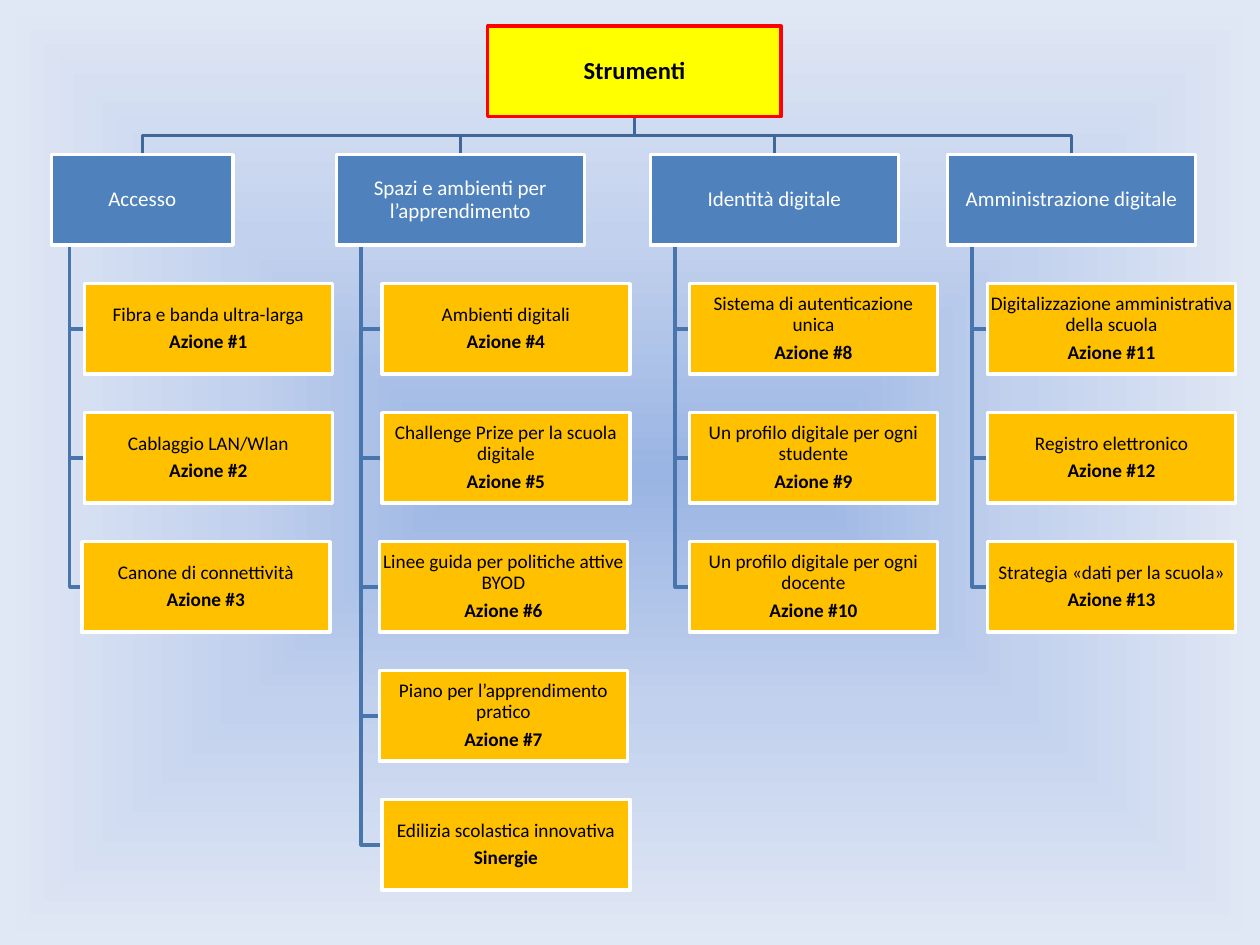
from pptx import Presentation
from pptx.dml.color import RGBColor
from pptx.enum.shapes import MSO_SHAPE as Shape
from pptx.enum.text import MSO_ANCHOR as Anchor, PP_ALIGN as Align
from pptx.oxml import parse_xml
from pptx.oxml.ns import nsdecls
from pptx.util import Cm, Pt

THEME = {
    "font": "Calibri",
    "line": 2,
    "root": {"fill": "FFFF00", "edge": "FF0000", "text": "000000", "size": 14},
    "area": {"fill": "4F81BD", "edge": "FFFFFF", "text": "FFFFFF", "size": 12},
    "action": {"fill": "FFC000", "edge": "FFFFFF", "text": "000000", "size": 11},
    "root_link": "3F6797",
    "action_link": "4875AC",
    "background": [(0, "9AB5E4"), (50, "C2D1ED"), (100, "E1E8F5")],
}

BOX_WIDTH, BOX_HEIGHT = 5, 1.82
ROOT_LEFT, ROOT_TOP, ROOT_WIDTH = 9.83, 0.53, 5.92
AREA_TOP = 3.12
ACTION_TOP, ACTION_STEP = 5.72, 2.6

AREAS = [
    ("Accesso", 1.04, 3.66, [
        ("Fibra e banda ultra-larga", "Azione #1", 1.7),
        ("Cablaggio LAN/Wlan", "Azione #2", 1.7),
        ("Canone di connettività", "Azione #3", 1.65),
    ]),
    ("Spazi e ambienti per l’apprendimento", 6.78, BOX_WIDTH, [
        ("Ambienti digitali", "Azione #4", 7.7),
        ("Challenge Prize per la scuola digitale", "Azione #5", 7.7),
        ("Linee guida per politiche attive BYOD", "Azione #6", 7.65),
        ("Piano per l’apprendimento pratico", "Azione #7", 7.65),
        ("Edilizia scolastica innovativa", "Sinergie", 7.7),
    ]),
    ("Identità digitale", 13.11, BOX_WIDTH, [
        ("Sistema di autenticazione unica", "Azione #8", 13.9),
        ("Un profilo digitale per ogni studente", "Azione #9", 13.9),
        ("Un profilo digitale per ogni docente", "Azione #10", 13.9),
    ]),
    ("Amministrazione digitale", 19.1, BOX_WIDTH, [
        ("Digitalizzazione amministrativa della scuola", "Azione #11", 19.91),
        ("Registro elettronico", "Azione #12", 19.91),
        ("Strategia «dati per la scuola»", "Azione #13", 19.91),
    ]),
]

deck = Presentation()
deck.slide_width, deck.slide_height = Cm(25.4), Cm(19.05)
page = deck.slides.add_slide(deck.slide_layouts[6])

stops = "".join(
    f'<a:gs pos="{position * 1000}"><a:srgbClr val="{color}"/></a:gs>'
    for position, color in THEME["background"]
)
page.element.cSld.insert(0, parse_xml(
    f'<p:bg {nsdecls("p", "a")}><p:bgPr><a:gradFill rotWithShape="1">'
    f'<a:gsLst>{stops}</a:gsLst><a:path path="shape">'
    '<a:fillToRect l="50000" t="50000" r="50000" b="50000"/></a:path>'
    '</a:gradFill><a:effectLst/></p:bgPr></p:bg>'
))


def add_link(points, color):
    corners = [(Cm(x), Cm(y)) for x, y in points]
    builder = page.shapes.build_freeform(*corners[0])
    builder.add_line_segments(corners[1:], close=False)
    link = builder.convert_to_shape()
    link.shadow.inherit = False
    link.fill.background()
    link.line.color.rgb = RGBColor.from_string(color)
    link.line.width = Pt(THEME["line"])


def add_box(left, top, width, lines, style):
    box = page.shapes.add_shape(
        Shape.RECTANGLE, Cm(left), Cm(top), Cm(width), Cm(BOX_HEIGHT))
    box.shadow.inherit = False
    box.fill.solid()
    box.fill.fore_color.rgb = RGBColor.from_string(style["fill"])
    box.line.color.rgb = RGBColor.from_string(style["edge"])
    box.line.width = Pt(THEME["line"])
    frame = box.text_frame
    frame.word_wrap = True
    frame.vertical_anchor = Anchor.MIDDLE
    frame.margin_left = frame.margin_right = Cm(0.02)
    frame.margin_top = frame.margin_bottom = Cm(0.02)
    frame.text = "\n".join(text for text, bold in lines)
    for para, (text, bold) in zip(frame.paragraphs, lines):
        para.alignment = Align.CENTER
        para.line_spacing = 0.9
        para.space_after = Pt(style["size"] * 0.35)
        span = para.runs[0]
        span.font.name = THEME["font"]
        span.font.size = Pt(style["size"])
        span.font.bold = bold
        span.font.color.rgb = RGBColor.from_string(style["text"])


root_center = ROOT_LEFT + ROOT_WIDTH / 2
root_bottom = ROOT_TOP + BOX_HEIGHT
branch_y = (root_bottom + AREA_TOP) / 2

for title, left, width, actions in AREAS:
    center = left + width / 2
    trunk = left + width / 10
    add_link([(root_center, root_bottom), (root_center, branch_y),
              (center, branch_y), (center, AREA_TOP)], THEME["root_link"])
    for row, (name, label, action_left) in enumerate(actions):
        middle = ACTION_TOP + row * ACTION_STEP + BOX_HEIGHT / 2
        add_link([(trunk, AREA_TOP + BOX_HEIGHT), (trunk, middle),
                  (action_left, middle)], THEME["action_link"])

add_box(ROOT_LEFT, ROOT_TOP, ROOT_WIDTH, [("Strumenti", True)], THEME["root"])
for title, left, width, actions in AREAS:
    add_box(left, AREA_TOP, width, [(title, False)], THEME["area"])
    for row, (name, label, action_left) in enumerate(actions):
        add_box(action_left, ACTION_TOP + row * ACTION_STEP, BOX_WIDTH,
                [(name, False), (label, True)], THEME["action"])

deck.save("out.pptx")
